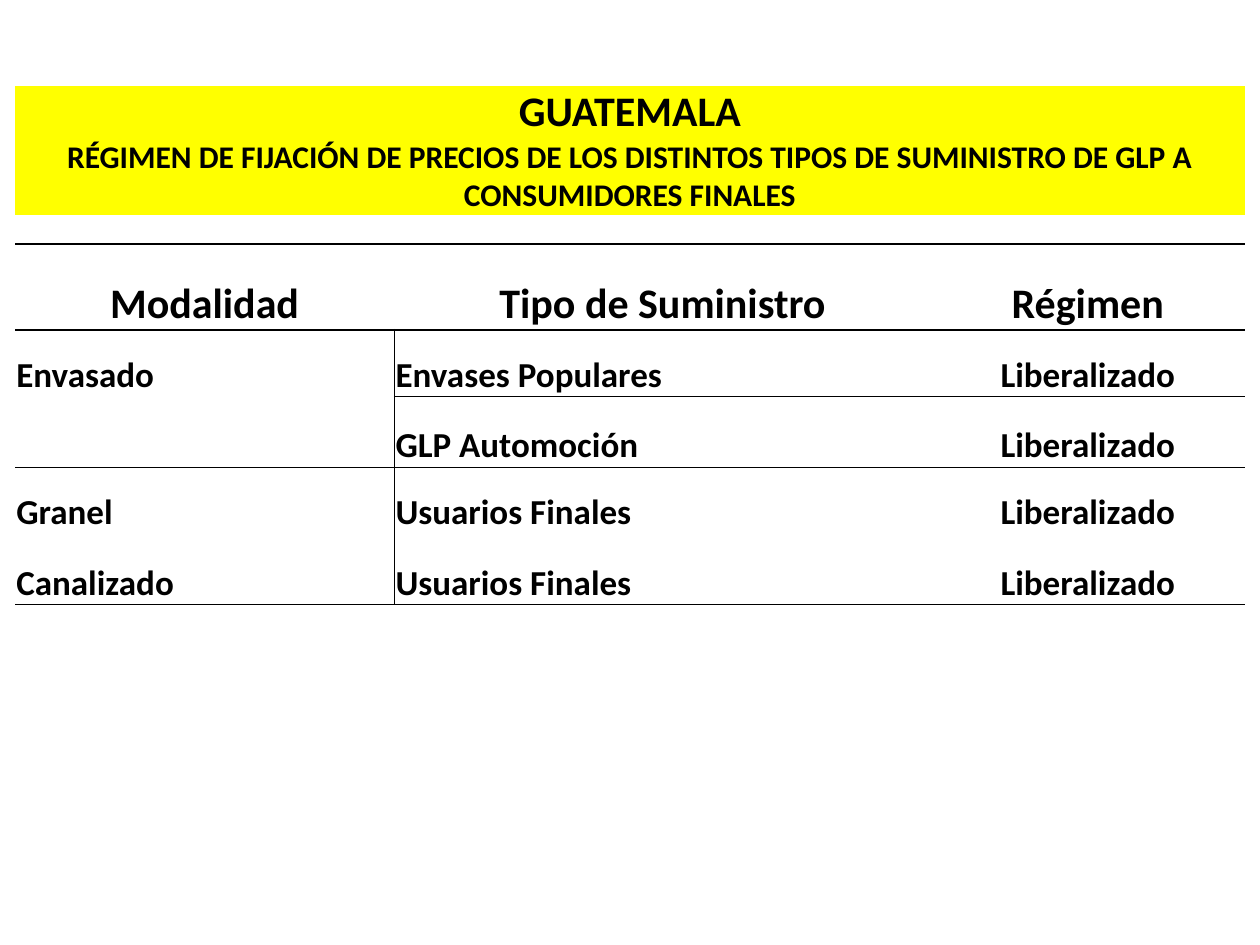
from lxml.etree import SubElement as Sub
from pptx import Presentation
from pptx.dml.color import RGBColor
from pptx.enum.text import MSO_ANCHOR as Anchor, PP_ALIGN as Align
from pptx.oxml.ns import qn
from pptx.util import Pt

BLACK, YELLOW = "000000", "FFFF00"
COLS = [216.7, 306.7, 179.3]
ROWS = [72.7, 16.6, 49, 38.2, 40.3, 38.2, 40.3]
TITLE = [
    ("GUATEMALA", 24),
    ("RÉGIMEN DE FIJACIÓN DE PRECIOS DE LOS DISTINTOS TIPOS DE "
     "SUMINISTRO DE GLP A CONSUMIDORES FINALES", 18),
]
HEADS = ["Modalidad", "Tipo de Suministro", "Régimen"]
BODY = [
    ["Envasado", "Envases Populares", "Liberalizado"],
    ["", "GLP Automoción", "Liberalizado"],
    ["Granel", "Usuarios Finales", "Liberalizado"],
    ["Canalizado", "Usuarios Finales", "Liberalizado"],
]
HEAD = 2
FIRST = HEAD + 1
RULES = {1: 1.5, 2: 1.5, 3: 0.5, 4: 1, 6: 1}  # row above the line: width


def color(code):
    return RGBColor.from_string(code)


def assign(item, values):
    for name, value in values.items():
        setattr(item, name, value)


def write(cell, lines, align):
    """Fill a cell with (text, size) lines, one paragraph each."""
    assign(cell, {"margin_left": Pt(0.75), "margin_right": Pt(0.75),
                  "margin_top": Pt(0.75), "margin_bottom": 0,
                  "vertical_anchor": Anchor.BOTTOM})
    frame = cell.text_frame
    for i, (text, size) in enumerate(lines):
        para = frame.add_paragraph() if i else frame.paragraphs[0]
        para.alignment = align
        if text:
            run = para.add_run()
            run.text = text
            assign(run.font, {"name": "Calibri", "size": Pt(size), "bold": True})
            run.font.color.rgb = color(BLACK)
        else:
            Sub(para._p, qn("a:endParaRPr"), sz=str(size * 100))


def border(cell, sides):
    """Draw the left, right, top and bottom lines; 0 means no line."""
    props = cell._tc.get_or_add_tcPr()
    for i, (side, width) in enumerate(zip("LRTB", sides)):
        line = Sub(props, qn("a:ln" + side), w=str(Pt(width)))
        if width:
            fill = Sub(line, qn("a:solidFill"))
            Sub(fill, qn("a:srgbClr"), val=BLACK)
        else:
            Sub(line, qn("a:noFill"))
        props.insert(i, line)


def rule(row, col):
    """Width of the line below a cell."""
    if row == FIRST and col == 0:
        return 0
    return RULES.get(row, 0)


def edges(row, col):
    side = 0.5 if row >= FIRST else 0
    return (side if col == 1 else 0, side if col == 0 else 0,
            rule(row - 1, col), rule(row, col))


def content(row, col):
    """Lines and alignment of a cell."""
    if row == 0:
        return (TITLE if col == 0 else [("", 8)]), Align.CENTER
    if row < HEAD:
        return [("", 8)], Align.LEFT
    if row == HEAD:
        return [(HEADS[col], 24)], Align.CENTER
    align = Align.CENTER if col == 2 else Align.LEFT
    return [(BODY[row - FIRST][col], 20)], align


def grid(slide):
    shape = slide.shapes.add_table(len(ROWS), len(COLS), Pt(8.6), Pt(49),
                                   Pt(sum(COLS)), Pt(sum(ROWS)))
    table = shape.table
    assign(table, {"first_row": False, "horz_banding": False})
    for col, width in zip(table.columns, COLS):
        col.width = Pt(width)
    for row, height in zip(table.rows, ROWS):
        row.height = Pt(height)
    table.cell(0, 0).merge(table.cell(0, len(COLS) - 1))
    for row in range(len(ROWS)):
        for col in range(len(COLS)):
            cell = table.cell(row, col)
            write(cell, *content(row, col))
            if row == 0:
                cell.fill.solid()
                cell.fill.fore_color.rgb = color(YELLOW)
            else:
                cell.fill.background()
            border(cell, edges(row, col))


def main():
    deck = Presentation()
    assign(deck, {"slide_width": Pt(720), "slide_height": Pt(540)})
    grid(deck.slides.add_slide(deck.slide_layouts[6]))
    deck.save("out.pptx")


if __name__ == "__main__":
    main()
